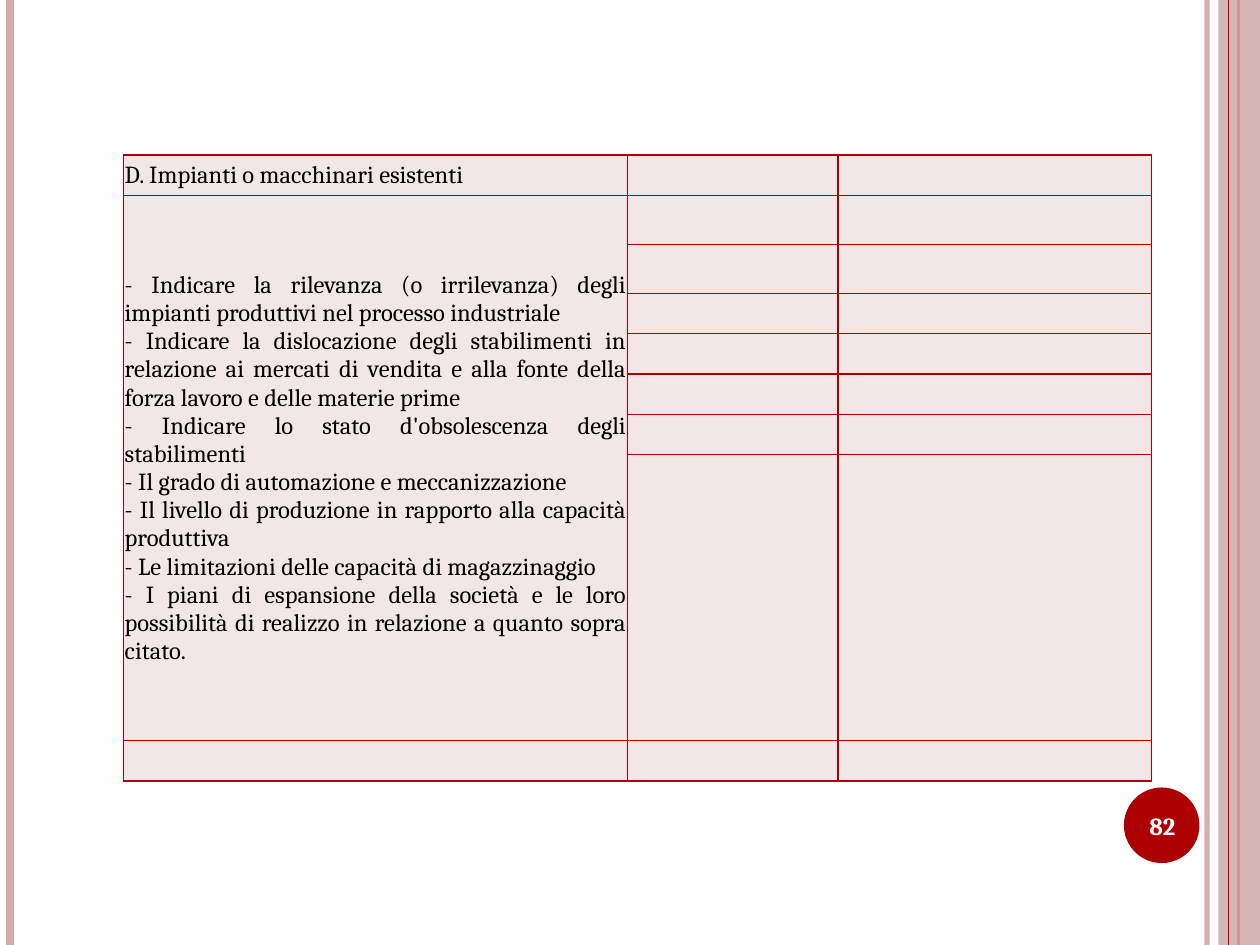
from dataclasses import dataclass

from lxml import etree
from pptx import Presentation
from pptx.dml.color import RGBColor
from pptx.enum.shapes import MSO_CONNECTOR, MSO_SHAPE
from pptx.enum.text import MSO_ANCHOR, PP_ALIGN
from pptx.oxml import parse_xml
from pptx.oxml.ns import nsdecls, qn
from pptx.util import Inches, Pt


@dataclass(frozen=True)
class Theme:
    red: str = "AD0101"
    pink: str = "D3ABAB"
    cell: str = "F1E7E7"
    black: str = "000000"
    white: str = "FFFFFF"
    font: str = "Cambria"
    size: int = 14
    border: int = 1


theme = Theme()


def set_alpha(fill_parent, percent):
    color = next(fill_parent.iter(qn("a:srgbClr")))
    etree.SubElement(color, qn("a:alpha")).set("val", str(percent * 1000))


def write_text(para, text, color, align, bold=False):
    para.alignment = align
    span = para.add_run()
    span.text = text
    formats = {"name": theme.font, "size": Pt(theme.size), "bold": bold}
    for name, value in formats.items():
        setattr(span.font, name, value)
    span.font.color.rgb = RGBColor.from_string(color)


deck = Presentation()
deck.slide_width, deck.slide_height = Inches(10), Inches(7.5)
page = deck.slides.add_slide(deck.slide_layouts[6])

# Side stripes: the pink band lies over the third line and under the last
stripes = [
    (9.58, theme.pink, 3, 93),
    (0.08, theme.pink, 4.5, 100),
    (9.83, theme.red, 1.5, 100),
    "band",
    (9.75, theme.red, 0.75, 100),
]
for stripe in stripes:
    if stripe == "band":
        band = page.shapes.add_shape(
            MSO_SHAPE.RECTANGLE, Inches(9.67), 0, Inches(0.33), deck.slide_height)
        band.shadow.inherit = False
        band.fill.solid()
        band.fill.fore_color.rgb = RGBColor.from_string(theme.pink)
        set_alpha(band.fill._xPr, 87)
        band.line.fill.background()
        continue
    left, color, width, alpha = stripe
    line = page.shapes.add_connector(
        MSO_CONNECTOR.STRAIGHT, Inches(left), 0, Inches(left), deck.slide_height)
    line.line.color.rgb = RGBColor.from_string(color)
    line.line.width = Pt(width)
    if alpha < 100:
        set_alpha(line.line._ln, alpha)
    etree.SubElement(line._element.spPr, qn("a:effectLst"))

# Page number
badge = page.shapes.add_shape(
    MSO_SHAPE.OVAL, Inches(8.92), Inches(6.25), Inches(0.6), Inches(0.6))
badge.shadow.inherit = False
badge.fill.solid()
badge.fill.fore_color.rgb = RGBColor.from_string(theme.red)
badge.line.fill.background()

number_box = page.shapes.add_textbox(
    Inches(8.89), Inches(6.27), Inches(0.67), Inches(0.57))
number_box.text_frame.word_wrap = True
number_box.text_frame.vertical_anchor = MSO_ANCHOR.MIDDLE
write_text(number_box.text_frame.paragraphs[0], "82", theme.white,
           PP_ALIGN.CENTER, bold=True)

# Table grid
column_widths = [4, 1.67, 2.49]
row_heights = [0.32, 0.39, 0.39, 0.32, 0.32, 0.32, 0.32, 2.27, 0.32]
table = page.shapes.add_table(
    len(row_heights), len(column_widths), Inches(0.98), Inches(1.23),
    Inches(sum(column_widths)), Inches(sum(row_heights))).table
table.first_row = table.horz_banding = False
for column, width in zip(table.columns, column_widths):
    column.width = Inches(width)
for row, height in zip(table.rows, row_heights):
    row.height = Inches(height)
table.cell(1, 0).merge(table.cell(7, 0))

# Cell text
heading = ["D. Impianti o macchinari esistenti"]
points = [
    "- Indicare la rilevanza (o irrilevanza) degli impianti produttivi nel processo industriale",
    "- Indicare la dislocazione degli stabilimenti in relazione ai mercati di vendita"
    " e alla fonte della forza lavoro e delle materie prime",
    "- Indicare lo stato d'obsolescenza degli stabilimenti",
    "- Il grado di automazione e meccanizzazione",
    "- Il livello di produzione in rapporto alla capacità produttiva",
    "- Le limitazioni delle capacità di magazzinaggio",
    "- I piani di espansione della società e le loro possibilità di realizzo"
    " in relazione a quanto sopra citato.",
]
for row_index, texts in enumerate([heading, points]):
    frame = table.cell(row_index, 0).text_frame
    for index, text in enumerate(texts):
        para = frame.add_paragraph() if index else frame.paragraphs[0]
        write_text(para, text, theme.black, PP_ALIGN.JUSTIFY)

# Cell format
cell_format = {
    "margin_left": Inches(0.01),
    "margin_right": Inches(0.01),
    "margin_top": Inches(0.01),
    "margin_bottom": 0,
    "vertical_anchor": MSO_ANCHOR.MIDDLE,
}
for cell in table.iter_cells():
    for name, value in cell_format.items():
        setattr(cell, name, value)
    if not cell.text_frame.text:
        end = etree.SubElement(cell.text_frame.paragraphs[0]._p, qn("a:endParaRPr"))
        end.set("sz", str(theme.size * 100))
    properties = cell._tc.get_or_add_tcPr()
    for side in ("lnL", "lnR", "lnT", "lnB"):
        properties.append(parse_xml(
            f'<a:{side} {nsdecls("a")} w="{Pt(theme.border)}"><a:solidFill>'
            f'<a:srgbClr val="{theme.red}"/></a:solidFill></a:{side}>'))
    cell.fill.solid()
    cell.fill.fore_color.rgb = RGBColor.from_string(theme.cell)

deck.save("out.pptx")
